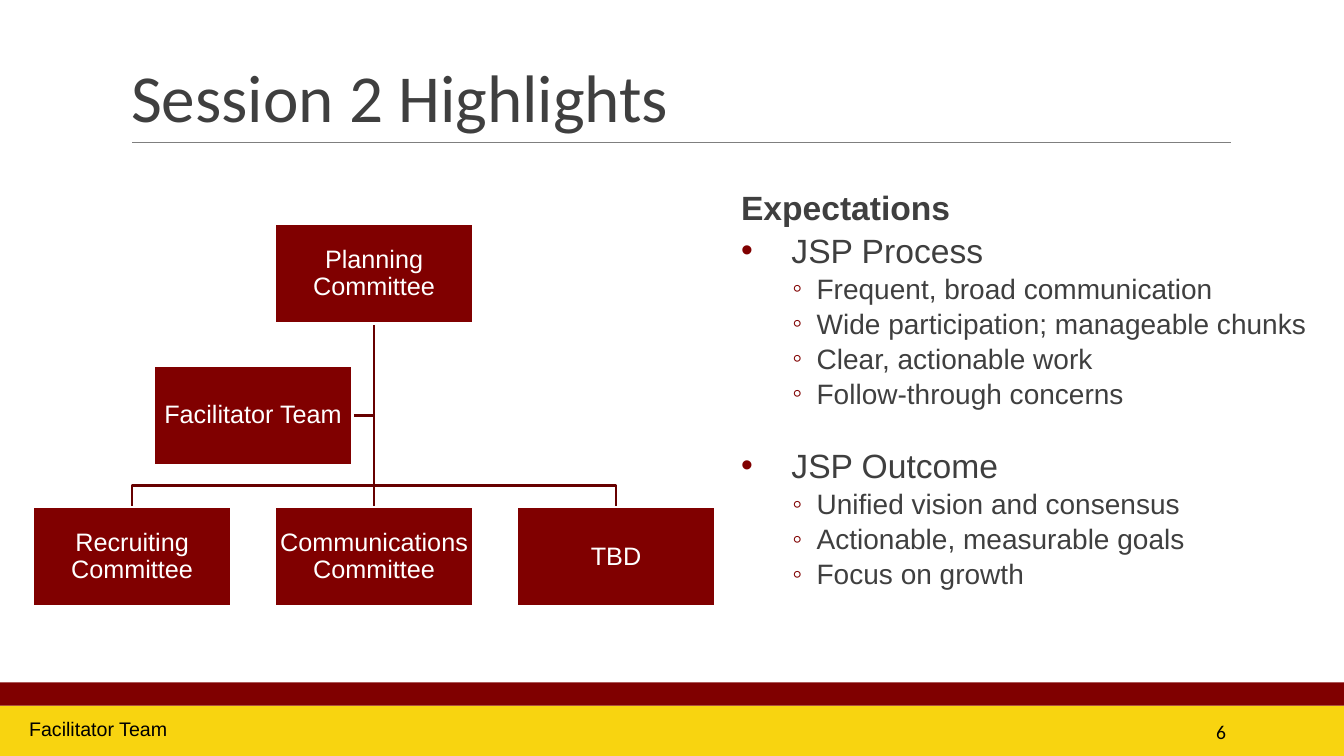
from lxml.etree import SubElement
from pptx import Presentation
from pptx.dml.color import RGBColor
from pptx.enum.shapes import MSO_CONNECTOR as Connector, MSO_SHAPE as Shape
from pptx.enum.text import MSO_ANCHOR as Anchor, MSO_AUTO_SIZE as AutoSize, PP_ALIGN as Align
from pptx.oxml.ns import qn
from pptx.util import Inches, Pt

COLOURS = {
    "maroon": "800000", "branch": "670000", "gold": "F8D410", "rule": "7F7F7F",
    "text": "3F3F3F", "white": "FFFFFF", "black": "000000",
}
BOX_W, BOX_H = 1.98, 0.99


class SlideBuilder:
    def __init__(self, slide):
        self.slide = slide
        self.shapes = slide.shapes

    def colour(self, name):
        return RGBColor.from_string(COLOURS[name])

    def style(self, paragraph, size, colour, font="Arial", align=Align.LEFT, bold=False):
        paragraph.alignment = align
        paragraph.font.name = font
        paragraph.font.size = Pt(size)
        paragraph.font.bold = bold
        paragraph.font.color.rgb = self.colour(colour)

    def frame(self, shape, anchor, inset_x=0.1, inset_y=0.05):
        frame = shape.text_frame
        frame.word_wrap = True
        frame.auto_size = AutoSize.NONE
        frame.vertical_anchor = anchor
        frame.margin_left = frame.margin_right = Inches(inset_x)
        frame.margin_top = frame.margin_bottom = Inches(inset_y)
        return frame

    def title(self, text, x, y, w, h):
        title = self.shapes.title
        title.left, title.top, title.width, title.height = map(Inches, (x, y, w, h))
        frame = self.frame(title, Anchor.BOTTOM)
        frame.text = text
        frame.paragraphs[0].line_spacing = 0.85
        self.style(frame.paragraphs[0], 48, "text", "Calibri")

    def rect(self, x, y, w, h, fill):
        rect = self.shapes.add_shape(Shape.RECTANGLE, *map(Inches, (x, y, w, h)))
        rect.shadow.inherit = False
        rect.fill.solid()
        rect.fill.fore_color.rgb = self.colour(fill)
        rect.line.fill.background()
        return rect

    def org_box(self, text, x, y):
        box = self.rect(x, y, BOX_W, BOX_H, "maroon")
        box.line.color.rgb = self.colour("white")
        box.line.width = Pt(2)
        frame = self.frame(box, Anchor.MIDDLE, 0.01, 0.01)
        frame.text = text
        frame.paragraphs[0].line_spacing = 0.9
        self.style(frame.paragraphs[0], 18, "white", align=Align.CENTER)
        return box

    def line(self, x1, y1, x2, y2, colour, width):
        line = self.shapes.add_connector(Connector.STRAIGHT, *map(Inches, (x1, y1, x2, y2)))
        line.line.color.rgb = self.colour(colour)
        line.line.width = Pt(width)
        SubElement(line._element.spPr, qn("a:effectLst"))
        return line

    def branch(self, *points):
        start, *rest = [(Inches(x), Inches(y)) for x, y in points]
        builder = self.shapes.build_freeform(*start)
        builder.add_line_segments(rest, close=False)
        branch = builder.convert_to_shape()
        branch.shadow.inherit = False
        branch.fill.background()
        branch.line.color.rgb = self.colour("branch")
        branch.line.width = Pt(2)

    def label(self, text, x, y, w, h, anchor=Anchor.TOP, font="Arial", align=Align.LEFT):
        box = self.shapes.add_textbox(*map(Inches, (x, y, w, h)))
        frame = self.frame(box, anchor)
        frame.text = text
        self.style(frame.paragraphs[0], 14, "black", font, align)

    def bullet(self, paragraph, mark, margin, hang):
        props = paragraph._p.get_or_add_pPr()
        props.set("marL", str(Inches(margin)))
        props.set("indent", str(-Inches(hang)))
        tint = SubElement(props, qn("a:buClr"))
        SubElement(tint, qn("a:srgbClr"), val=COLOURS["maroon"])
        SubElement(props, qn("a:buFont"), typeface="Arial")
        SubElement(props, qn("a:buChar"), char=mark)

    def outline(self, heading, topics, x, y, w, h):
        frame = self.frame(self.shapes.add_textbox(*map(Inches, (x, y, w, h))), Anchor.TOP, 0)
        first = frame.paragraphs[0]
        first.text = heading
        first._p.get_or_add_pPr().set("marL", str(Inches(0.25)))
        self.style(first, 24, "text", bold=True)
        for number, (topic, points) in enumerate(topics.items()):
            head = frame.add_paragraph()
            head.text = topic
            self.bullet(head, "•", 0.75, 0.5)
            head.space_before = Pt(25 if number else 2)
            self.style(head, 24, "text")
            for point in points:
                item = frame.add_paragraph()
                item.text = point
                item.level = 1
                self.bullet(item, "◦", 1, 0.24)
                item.space_before = Pt(1)
                self.style(item, 20, "text")


def main():
    prs = Presentation()
    prs.slide_width, prs.slide_height = Inches(13.33), Inches(7.5)
    page = SlideBuilder(prs.slides.add_slide(prs.slide_layouts[5]))

    # Footer bands, title and rule
    page.rect(0, 7, 13.33, 0.5, "gold")
    page.rect(0, 6.77, 13.33, 0.23, "maroon")
    page.line(1.31, 1.41, 12.21, 1.41, "rule", 0.75)
    page.title("Session 2 Highlights", 1.2, 0.31, 11, 1.09)

    # Expectations
    page.outline("Expectations", {
        "JSP Process": [
            "Frequent, broad communication",
            "Wide participation; manageable chunks",
            "Clear, actionable work",
            "Follow-through concerns",
        ],
        "JSP Outcome": [
            "Unified vision and consensus",
            "Actionable, measurable goals",
            "Focus on growth",
        ],
    }, 7.1, 1.8, 6.06, 4.55)

    # Organisation chart: lines lie behind the boxes
    left, pitch = 0.32, 2.4
    top_y, team_y, row_y, bus_y = 2.22, 3.63, 5.03, 4.82
    middle = left + pitch + BOX_W / 2
    top_end, team_mid = top_y + BOX_H, team_y + BOX_H / 2
    team_x = left + pitch / 2
    page.branch((middle, top_end), (middle, team_mid), (team_x + BOX_W, team_mid))
    for end in (middle - pitch, middle + pitch):
        page.branch((middle, top_end), (middle, bus_y), (end, bus_y), (end, row_y))
    trunk = page.line(middle, top_end, middle, row_y, "branch", 2)

    planning = page.org_box("Planning Committee", left + pitch, top_y)
    committees = ["Recruiting Committee", "Communications Committee", "TBD"]
    row = [page.org_box(name, left + i * pitch, row_y) for i, name in enumerate(committees)]
    page.org_box("Facilitator Team", team_x, team_y)
    trunk.begin_connect(planning, 2)
    trunk.end_connect(row[1], 0)

    # Footer text
    page.label("Facilitator Team", 0.19, 7.06, 2.27, 0.34)
    page.label("6", 10.83, 7.06, 1.43, 0.4, Anchor.MIDDLE, "Calibri", Align.RIGHT)

    prs.save("out.pptx")


if __name__ == "__main__":
    main()
